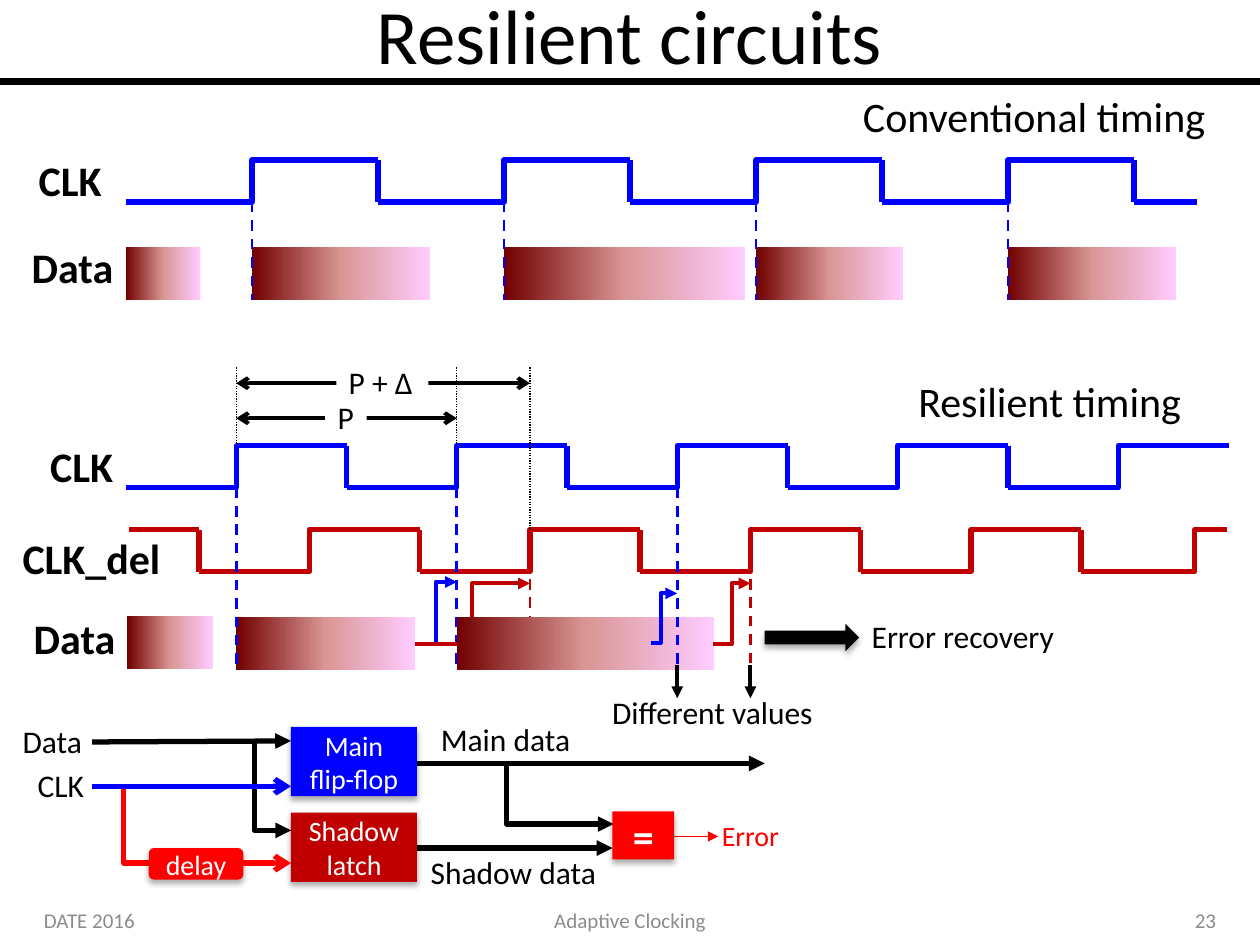
from copy import deepcopy

from lxml.etree import SubElement
from pptx import Presentation
from pptx.dml.color import RGBColor
from pptx.enum.dml import MSO_LINE
from pptx.enum.shapes import MSO_CONNECTOR, MSO_SHAPE
from pptx.enum.text import MSO_ANCHOR, PP_ALIGN
from pptx.oxml.ns import qn
from pptx.util import Pt

STRAIGHT, ELBOW = MSO_CONNECTOR.STRAIGHT, MSO_CONNECTOR.ELBOW
RECT, ROUNDED = MSO_SHAPE.RECTANGLE, MSO_SHAPE.ROUNDED_RECTANGLE
PROCESS, RIGHT_ARROW = MSO_SHAPE.FLOWCHART_PROCESS, MSO_SHAPE.RIGHT_ARROW
DASH, DOT = MSO_LINE.DASH, MSO_LINE.ROUND_DOT
LEFT, CENTER, RIGHT = PP_ALIGN.LEFT, PP_ALIGN.CENTER, PP_ALIGN.RIGHT
TOP, MIDDLE = MSO_ANCHOR.TOP, MSO_ANCHOR.MIDDLE

BLACK, WHITE, GREY = "000000", "FFFFFF", "8C8C8C"
BLUE, CRIMSON, RED = "0000FF", "C00000", "FF0000"
DATA_STOPS = [(0, "720000"), (0.5, "D99694"), (1, "FFCCFF")]
SWING = 24
BAR_HEIGHT = 30.2


def rgb(color):
    return RGBColor.from_string(color)


def write(shape, text, size, color, bold=False, align=LEFT, anchor=TOP):
    frame = shape.text_frame
    frame.text = text
    frame.vertical_anchor = anchor
    for para in frame.paragraphs:
        para.alignment = align
        for span in para.runs:
            span.font.name = "Calibri"
            span.font.size = Pt(size)
            span.font.bold = bold
            span.font.color.rgb = rgb(color)


def add_label(page, x, y, width, height, text, size, color=BLACK, bold=False,
              align=LEFT, anchor=TOP, fill=None):
    box = page.shapes.add_textbox(Pt(x), Pt(y), Pt(width), Pt(height))
    box.text_frame.word_wrap = align != LEFT
    if fill:
        box.fill.solid()
        box.fill.fore_color.rgb = rgb(fill)
    write(box, text, size, color, bold, align, anchor)


def add_link(page, start, end, color, width, kind=STRAIGHT, dash=None,
             head=None, tail=None, bend=None):
    """Draw a connector; bend is the share of an elbow's width before its turn."""
    link = page.shapes.add_connector(kind, *map(Pt, start + end))
    link.line.color.rgb = rgb(color)
    link.line.width = Pt(width)
    if dash:
        link.line.dash_style = dash
    properties = link._element.spPr
    outline = properties.find(qn("a:ln"))
    for tag, arrow in (("a:headEnd", head), ("a:tailEnd", tail)):
        if arrow:
            SubElement(outline, qn(tag), type=arrow)
    if bend is not None:
        guides = properties.find(qn("a:prstGeom")).find(qn("a:avLst"))
        SubElement(guides, qn("a:gd"), name="adj1", fmla=f"val {round(bend * 100000)}")
    SubElement(properties, qn("a:effectLst"))
    return link


def add_branch(page, start, end, color, tail=None):
    """Draw a one-corner connector that runs down and then right."""
    mid_x, mid_y = (start[0] + end[0]) / 2, (start[1] + end[1]) / 2
    half_w, half_h = (end[0] - start[0]) / 2, (end[1] - start[1]) / 2
    link = add_link(page, (mid_x - half_h, mid_y - half_w),
                    (mid_x + half_h, mid_y + half_w), color, 3, ELBOW, tail=tail)
    properties = link._element.spPr
    properties.find(qn("a:prstGeom")).set("prst", "bentConnector2")
    frame = properties.find(qn("a:xfrm"))
    frame.set("rot", "16200000")
    frame.set("flipH", "1")


def add_block(page, kind, x, y, width, height, fill, text="", size=16, bold=False):
    """Draw a filled shape with a soft shadow below it."""
    block = page.shapes.add_shape(kind, Pt(x), Pt(y), Pt(width), Pt(height))
    block.fill.solid()
    block.fill.fore_color.rgb = rgb(fill)
    block.line.fill.background()
    block.shadow.inherit = False
    effects = block._element.spPr.find(qn("a:effectLst"))
    shadow = SubElement(effects, qn("a:outerShdw"), blurRad=str(Pt(3.5)),
                        dist=str(Pt(2.2)), dir="5400000", rotWithShape="0")
    shade = SubElement(shadow, qn("a:srgbClr"), val=BLACK)
    SubElement(shade, qn("a:alpha"), val="32000")
    if text:
        write(block, text, size, WHITE, bold, CENTER, MIDDLE)


def add_data_bar(page, x, y, width):
    bar = page.shapes.add_shape(PROCESS, Pt(x), Pt(y), Pt(width), Pt(BAR_HEIGHT))
    bar.shadow.inherit = False
    bar.line.fill.background()
    bar.fill.gradient()
    bar.fill.gradient_angle = 0
    stops = bar._element.spPr.find(qn("a:gradFill")).find(qn("a:gsLst"))
    stops.append(deepcopy(stops[0]))
    for stop, (position, color) in zip(bar.fill.gradient_stops, DATA_STOPS):
        stop.position = position
        stop.color.rgb = rgb(color)


def add_wave(page, x, high, period, count, color):
    """Draw clock periods that start low, rise halfway and fall at the end."""
    low = high + SWING
    for index in range(count):
        start, end = x + index * period, x + (index + 1) * period
        add_link(page, (start, low), (end, high), color, 3, ELBOW)
        add_link(page, (end, high), (end, low), color, 3)


def add_frame(page, width):
    add_link(page, (0, 46.8), (width, 46.8), BLACK, 4)
    add_label(page, 36, -8, width - 72, 54, "Resilient circuits", 44,
              align=CENTER, anchor=MIDDLE)
    footer = [(18, 168, "DATE 2016", LEFT), (246, 228, "Adaptive Clocking", CENTER),
              (534, 168, "23", RIGHT)]
    for x, box_width, text, align in footer:
        add_label(page, x, 511, box_width, 29, text, 12, GREY, align=align, anchor=MIDDLE)


def add_conventional_timing(page, left, top):
    period, high = 144, top + 43.4
    low, start = high + SWING, left + 72
    add_wave(page, start, high, period, 4, BLUE)
    add_link(page, (start + 4 * period, low), (left + 684, low), BLUE, 3)
    add_label(page, left + 15, top + 37, 51, 36, "CLK", 24, bold=True)
    add_label(page, left + 11, top + 86.6, 62, 36, "Data", 24, bold=True)
    add_label(page, left + 486, top, 212, 36, "Conventional timing", 24)
    add_data_bar(page, start, top + 93, 42.5)
    for index, width in enumerate((102, 138, 84, 96)):
        edge = start + period / 2 + index * period
        add_data_bar(page, edge, top + 93, width)
        add_link(page, (edge, low), (edge, top + 123.4), BLUE, 1.5, dash=DASH)


def add_resilient_timing(page, left, top):
    period, delay = 126, 41.8
    start, high, late_high = left + 72, top + 50.7, top + 98.6
    low, late_low = high + SWING, late_high + SWING
    first, second, third = (start + period * (index + 0.5) for index in range(3))
    second_late, third_late = second + delay, third + delay
    bar_top, bar_bottom = top + 148.8, top + 179

    add_wave(page, start, high, period, 4, BLUE)
    last = start + 4 * period
    add_link(page, (last, low), (last + period, high), BLUE, 3, ELBOW)
    late_start = start + delay
    add_link(page, (left + 74, late_high), (late_start, late_high), CRIMSON, 3)
    add_link(page, (late_start, late_high), (late_start, late_low), CRIMSON, 3)
    add_wave(page, late_start, late_high, period, 4, CRIMSON)
    add_link(page, (late_start + 4 * period, late_low), (left + 701, late_high),
             CRIMSON, 3, ELBOW, bend=0.78)

    add_label(page, left + 517.7, top + 7, 166, 36, "Resilient timing", 24)
    for x, y, width, text in ((21.6, 44.4, 51, "CLK"), (5.8, 97, 94, "CLK_del"),
                              (12.2, 142.3, 62, "Data")):
        add_label(page, left + x, top + y, width, 36, text, 24, bold=True)

    add_data_bar(page, left + 72.7, bar_top - 0.7, 49)
    add_data_bar(page, first, bar_top, 102)
    for edge in (first, second):
        add_link(page, (edge, low), (edge, bar_bottom), BLUE, 1.5, dash=DASH)
    for edge in (second_late, third_late):
        add_link(page, (edge, top + 116.4), (edge, bar_bottom), CRIMSON, 1.5, dash=DASH)
    ready = (left + 237, top + 164)
    add_link(page, ready, (second, top + 128.6), BLUE, 2.25, ELBOW, tail="triangle")
    add_link(page, ready, (second_late, top + 129.4), CRIMSON, 2.25, ELBOW, tail="triangle")
    add_data_bar(page, second, bar_top, 147)
    add_link(page, (left + 372.2, top + 163.2), (third, top + 135.1), BLUE, 2.25,
             ELBOW, tail="triangle", bend=0.36)
    add_link(page, (left + 407.5, top + 164), (third_late, top + 129.4), CRIMSON, 2.25,
             ELBOW, tail="triangle")
    add_link(page, (third, low), (third, bar_bottom), BLUE, 1.5, dash=DASH)

    for edge, bottom in ((first, high), (second, high), (second_late, late_high)):
        add_link(page, (edge, top + 6), (edge, bottom), BLACK, 0.75, dash=DOT)
    spans = [(second, 35, 185.8, 23.8, "P"), (second_late, 15, 192.2, 52.6, "P + Δ")]
    for end, y, x, width, text in spans:
        add_link(page, (first, top + y), (end, top + y), BLACK, 2.25,
                 head="arrow", tail="arrow")
        add_label(page, left + x, top + y - 15, width, 28.8, text, 18, fill=WHITE)

    add_block(page, RIGHT_ARROW, left + 437, top + 152.4, 54, 15.8, BLACK)
    add_label(page, left + 491, top + 145.2, 120, 28.8, "Error recovery", 18)
    add_label(page, left + 342.7, top + 188.4, 135, 28.8, "Different values", 18)
    for edge in (third, third_late):
        add_link(page, (edge, top + 176.2), (edge, top + 195), BLACK, 2.25, tail="triangle")


def add_circuit(page, left, top):
    def at(x, y):
        return left + x, top + y

    add_link(page, at(381.6, 70), at(410.4, 70), RED, 0.75, tail="triangle")
    add_branch(page, at(289.4, 29.8), at(350.6, 62.9), BLACK, "triangle")
    add_block(page, RECT, *at(350, 55.7), 35.3, 27.4, RED, "=", 24, True)
    add_block(page, RECT, *at(166.3, 7.4), 72, 39.6, BLUE, "Main\nflip-flop")
    add_block(page, RECT, *at(166.3, 56.4), 72, 39.6, CRIMSON, "Shadow\nlatch")
    add_branch(page, at(145.4, 15.4), at(166.3, 66.5), BLACK, "triangle")
    add_branch(page, at(70.6, 41.3), at(85, 85.2), RED)
    add_block(page, ROUNDED, *at(85, 76.6), 54, 18, RED, "delay")
    wires = [((52.6, 16), (166.3, 15.4), BLACK, "triangle"),
             ((139, 85.2), (166.3, 85.2), RED, "arrow"),
             ((238.3, 28.3), (437, 28.3), BLACK, "triangle"),
             ((238.3, 76.6), (350, 76.6), BLACK, "triangle"),
             ((52.6, 41.3), (166.3, 41.3), BLUE, "arrow")]
    for start, end, color, tail in wires:
        add_link(page, at(*start), at(*end), color, 3, tail=tail)
    for x, y, width, text in ((244.8, 0, 89, "Main data"), (239, 75.8, 110, "Shadow data"),
                              (14.4, 26.2, 42, "CLK"), (5.8, 1, 49, "Data")):
        add_label(page, *at(x, y), width, 28.8, text, 18)
    add_label(page, *at(405.4, 56.4), 47.5, 26.6, "Error", 16, RED)


def main():
    deck = Presentation()
    deck.slide_width, deck.slide_height = Pt(720), Pt(540)
    page = deck.slides.add_slide(deck.slide_layouts[6])
    add_frame(page, 720)
    add_conventional_timing(page, 0, 48)
    add_resilient_timing(page, 0, 204)
    add_circuit(page, 0, 408)
    deck.save("out.pptx")


if __name__ == "__main__":
    main()
